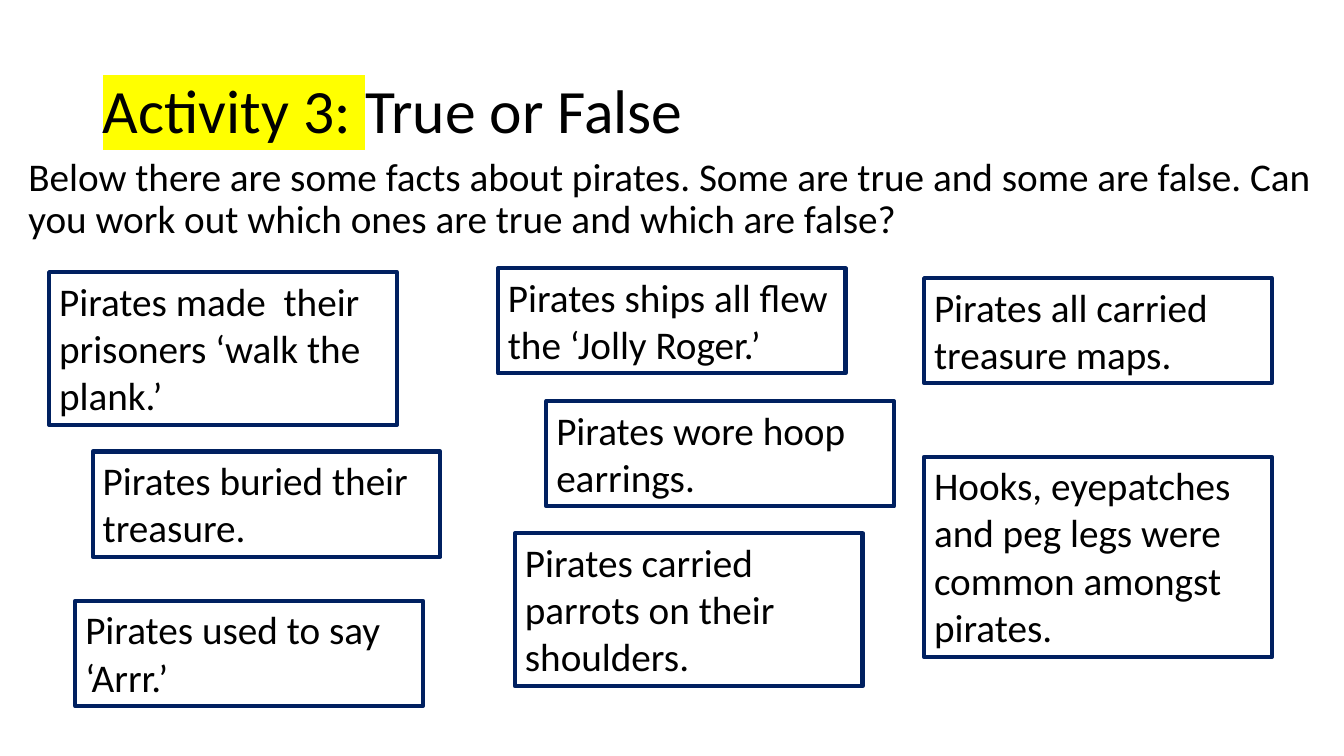
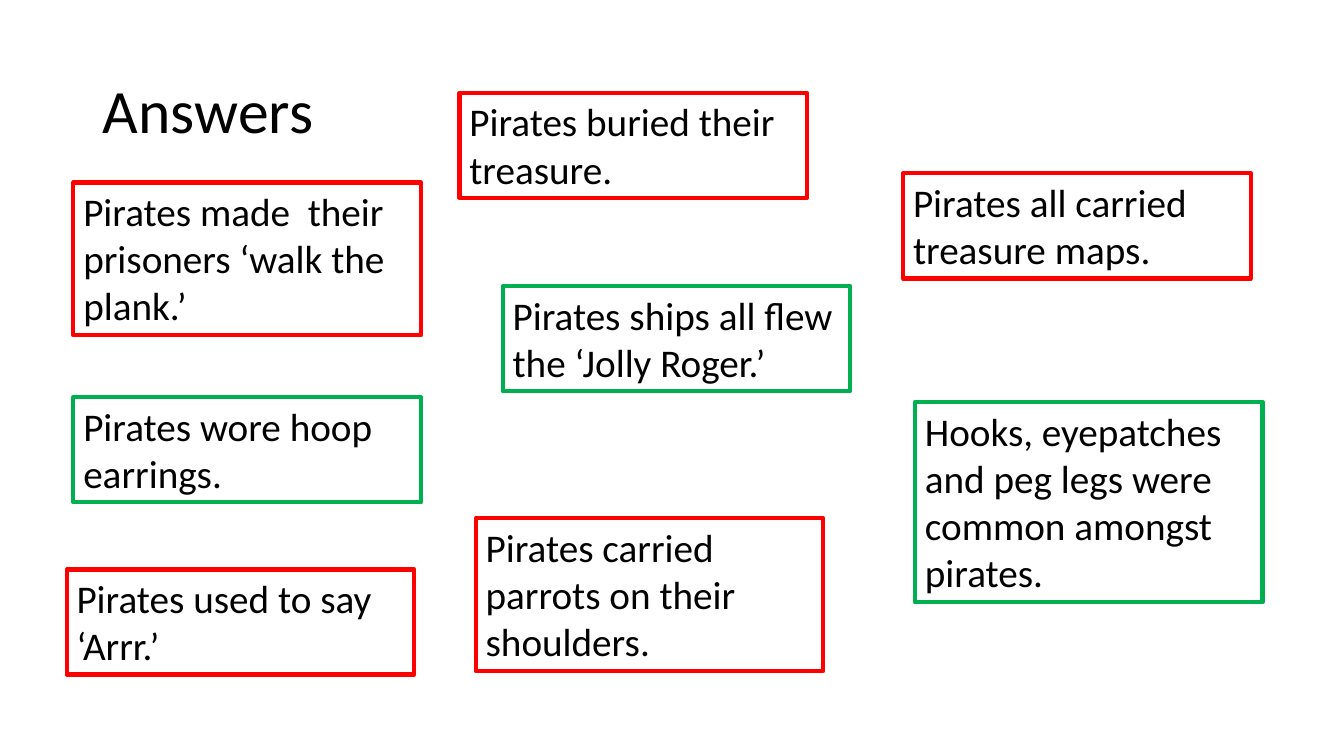
"""Build a pirate true-or-false activity and its answers."""

from dataclasses import dataclass

from lxml.etree import Element, SubElement as Sub
from pptx import Presentation as Deck
from pptx.dml.color import RGBColor as Rgb
from pptx.enum.text import MSO_ANCHOR as Anchor, MSO_AUTO_SIZE as Fit, PP_ALIGN as Align
from pptx.oxml.ns import qn
from pptx.shapes.base import BaseShape as Shape
from pptx.slide import Slide
from pptx.text.text import TextFrame as Frame, _Paragraph as Para, _Run as Run
from pptx.util import Cm, Pt

FONT = "Calibri"
BLACK, NAVY, RED, GREEN, YELLOW = "000000", "002060", "FF0000", "00B050", "FFFF00"
HEAD, TEXT = 44, 28
WIDTH, PAD, LINE = 8.76, 0.25, 1.2


@dataclass(frozen=True)
class Fact:
    """A claim, its line count and truth, and its place on each slide."""

    text: str
    lines: int
    true: bool
    ask: tuple[float, float]
    answer: tuple[float, float]


FACTS = [
    Fact("Pirates made  their prisoners ‘walk the plank.’", 3, False, (1.24, 6.86), (1.85, 4.6)),
    Fact("Pirates buried their treasure.", 2, False, (2.34, 11.38), (11.58, 2.34)),
    Fact("Pirates ships all flew the ‘Jolly Roger.’", 2, True, (12.55, 6.76), (12.67, 7.21)),
    Fact("Pirates all carried treasure maps.", 2, False, (23.29, 7.01), (22.76, 4.37)),
    Fact("Pirates wore hoop earrings.", 2, True, (13.77, 10.11), (1.85, 10.01)),
    Fact("Hooks, eyepatches and peg legs were common amongst pirates.", 4, True,
         (23.29, 11.51), (23.06, 10.13)),
    Fact("Pirates carried parrots on their shoulders.", 3, False, (12.98, 13.44), (11.99, 13.06)),
    Fact("Pirates used to say ‘Arrr.’", 2, False, (1.9, 15.14), (1.68, 14.35)),
]


def color(code: str) -> Rgb:
    """Turn a hex string into a colour."""
    return Rgb.from_string(code)


def write(para: Para, text: str, size: int) -> Run:
    """Add one black run."""
    run = para.add_run()
    run.text = text
    run.font.name, run.font.size = FONT, Pt(size)
    run.font.color.rgb = color(BLACK)
    return run


def mark(run: Run, code: str) -> None:
    """Highlight a run."""
    glow = Element(qn("a:highlight"))
    Sub(glow, qn("a:srgbClr"), val=code)
    run.font.fill._xPr.find(qn("a:solidFill")).addnext(glow)


def place(shape: Shape, left: float, top: float, width: float, height: float) -> Frame:
    """Move a placeholder and return its text frame."""
    shape.left, shape.top = Cm(left), Cm(top)
    shape.width, shape.height = Cm(width), Cm(height)
    frame = shape.text_frame
    frame.word_wrap, frame.auto_size = True, Fit.NONE
    para = frame.paragraphs[0]
    para.alignment, para.line_spacing = Align.LEFT, 0.9
    return frame


def title(slide: Slide, text: str, lead: str = "") -> None:
    """Fill the title, with an optional highlighted lead."""
    frame = place(slide.shapes.title, 2.34, 1.02, 29.21, 3.68)
    frame.vertical_anchor = Anchor.MIDDLE
    para = frame.paragraphs[0]
    if lead:
        mark(write(para, lead, HEAD), YELLOW)
    write(para, text, HEAD)


def body(slide: Slide, text: str) -> None:
    """Fill the body with an unbulleted paragraph."""
    para = place(slide.placeholders[1], 0.46, 3.84, 32.89, 14.96).paragraphs[0]
    para.space_before = Pt(10)
    props = para._p.get_or_add_pPr()
    props.set("marL", "0")
    props.set("indent", "0")
    Sub(props, qn("a:buNone"))
    write(para, text, TEXT)


def card(slide: Slide, fact: Fact, spot: tuple[float, float], edge: str) -> None:
    """Draw a fact in an outlined box."""
    left, top = spot
    box = slide.shapes.add_textbox(Cm(left), Cm(top), Cm(WIDTH), Cm(PAD + LINE * fact.lines))
    box.line.color.rgb, box.line.width = color(edge), Pt(3)
    frame = box.text_frame
    frame.word_wrap, frame.auto_size = True, Fit.SHAPE_TO_FIT_TEXT
    write(frame.paragraphs[0], fact.text, TEXT)


def main() -> None:
    """Build and save both slides."""
    deck = Deck()
    deck.slide_width, deck.slide_height = Cm(33.87), Cm(19.05)
    quiz = deck.slides.add_slide(deck.slide_layouts[1])
    title(quiz, "True or False", "Activity 3: ")
    body(quiz, "Below there are some facts about pirates. Some are true and some are false. "
               "Can you work out which ones are true and which are false?")
    key = deck.slides.add_slide(deck.slide_layouts[5])
    title(key, "Answers")
    for fact in FACTS:
        card(quiz, fact, fact.ask, NAVY)
        card(key, fact, fact.answer, GREEN if fact.true else RED)
    deck.save("out.pptx")


if __name__ == "__main__":
    main()
